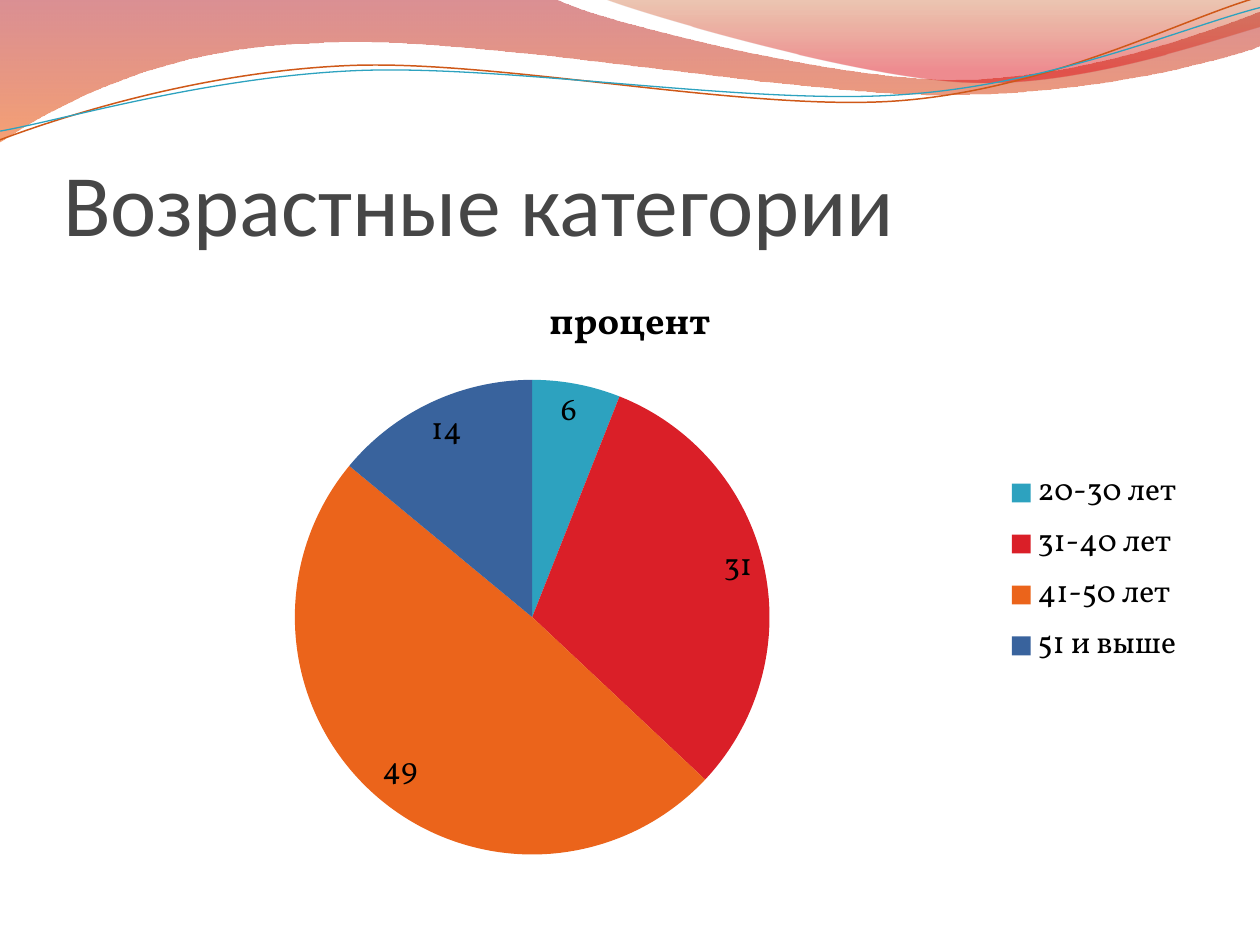
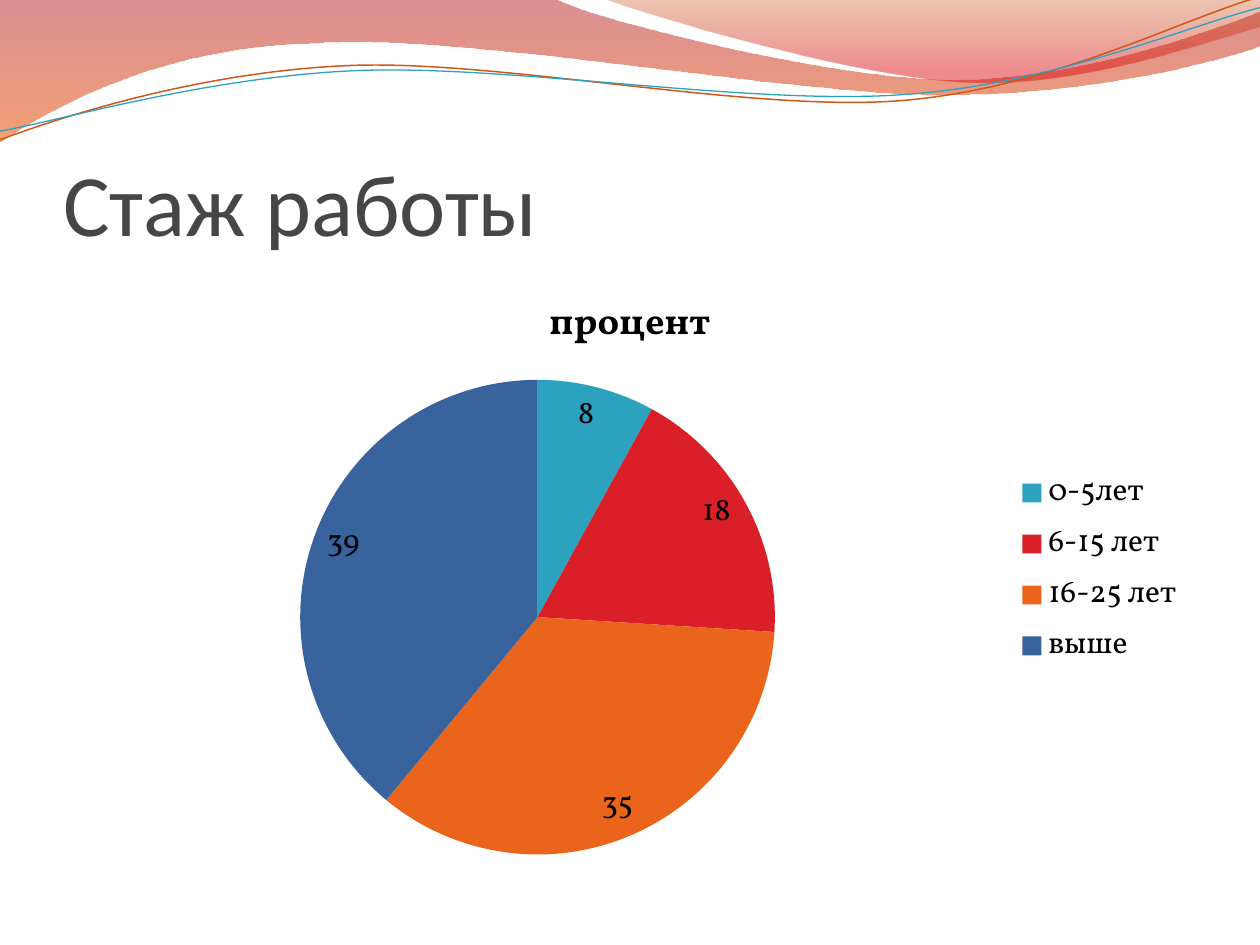
from math import cos, radians, sin

from lxml import etree
from pptx import Presentation
from pptx.chart.data import CategoryChartData
from pptx.dml.color import RGBColor
from pptx.enum.chart import XL_CHART_TYPE as CT, XL_LABEL_POSITION as LP, XL_LEGEND_POSITION as LEG
from pptx.enum.text import MSO_ANCHOR, MSO_AUTO_SIZE, PP_ALIGN
from pptx.oxml.ns import qn
from pptx.util import Pt

PX = 9144  # 100 px to the inch
TILT = 2.7  # degrees the thin curves are turned counter-clockwise

COLORS = {
    "background": "FFFFFF", "title": "464646", "text": "000000",
    "crimson": "AF0911", "amber": "EE5300", "rust": "C24400", "red": "DC000B",
    "orange_line": "CF5818", "teal_line": "2DA2BF",
}
PIE_COLORS = ["2DA2BF", "DA1F28", "EB641B", "39639D"]
TITLE_FONT, CHART_FONT = "Calibri", "Vollkorn"

# Outlines: a pair is a straight step, a triple of pairs is a Bezier curve
WIDE_WAVE = [
    (0, 0), (440, -1),
    ((476, 17), (664, 63), (758, 63)), ((853, 63), (958, 26), (1000, 9)),
    (1001, 36),
    ((983, 44), (870, 76), (746, 75)), ((622, 75), (382, 28), (257, 34)),
    ((129, 36), (46, 83), (-1, 113)),
]
RIGHT_WAVE = [
    (479, -1), ((509, 11), (682, 62), (769, 65)),
    ((856, 69), (961, 32), (1000, 21)), (1000, 0),
]
ORANGE_CURVE = [
    (0, 111), ((48, 93), (158, 57), (277, 52)),
    ((395, 47), (593, 89), (713, 80)), ((833, 71), (938, 15), (998, -2)),
]
TEAL_CURVE = [
    (0, 104), ((47, 96), (164, 61), (283, 56)),
    ((403, 51), (597, 84), (717, 75)), ((836, 67), (941, 21), (1000, 6)),
]
ORANGE_CENTER, TEAL_CENTER = (499, 57), (499, 59)

# Gradient stops: position, colour, opacity in percent
WIDE_STOPS = [(0, "crimson", 45), (1, "amber", 55)]
RIGHT_STOPS = [(0, "rust", 30), (0.8, "red", 45)]

SLIDES = [
    ("Возрастные категории",
     {"20-30 лет": 6, "31-40 лет": 31, "41-50 лет": 49, "51 и выше": 14}),
    ("Стаж работы",
     {"0-5лет": 8, "6-15 лет": 18, "16-25 лет": 35, "выше": 39}),
]


def rgb(name):
    return RGBColor.from_string(COLORS[name])


def is_curve(step):
    return len(step) == 3


def turn(point, center):
    """Turn a point clockwise by TILT, so the shape's rotation turns it back."""
    x, y = point[0] - center[0], point[1] - center[1]
    c, s = cos(radians(TILT)), sin(radians(TILT))
    return center[0] + x * c - y * s, center[1] + x * s + y * c


class Deck:
    def __init__(self, width, height):
        self.prs = Presentation()
        self.prs.slide_width, self.prs.slide_height = width * PX, height * PX
        self.layout = self.prs.slide_layouts[5]
        self.slide = None

    def new_slide(self):
        self.slide = self.prs.slides.add_slide(self.layout)
        fill = self.slide.background.fill
        fill.solid()
        fill.fore_color.rgb = rgb("background")

    def freeform(self, shapes, outline, center=None):
        points = []
        for step in outline:
            points.extend(step if is_curve(step) else [step])
        if center:
            points = [turn(point, center) for point in points]
        start, *rest = [(round(x * PX), round(y * PX)) for x, y in points]
        builder = shapes.build_freeform(*start)
        builder.add_line_segments(rest, close=center is None)
        s = builder.convert_to_shape()
        s.shadow.inherit = False

        # Join every three steps of a curve into one Bezier segment
        lines = list(s.element.iter(qn("a:lnTo")))
        for step in outline[1:]:
            first = lines.pop(0)
            if is_curve(step):
                first.tag = qn("a:cubicBezTo")
                for line in (lines.pop(0), lines.pop(0)):
                    first.append(line[0])
                    line.getparent().remove(line)
        return s

    def wave(self, outline, stops):
        s = self.freeform(self.slide.shapes, outline)
        s.line.fill.background()
        s.fill.gradient()
        s.fill.gradient_angle = 270
        for stop, (position, color, _) in zip(s.fill.gradient_stops, stops):
            stop.position = position
            stop.color.rgb = rgb(color)
        for clr, (_, _, opacity) in zip(s.element.iter(qn("a:srgbClr")), stops):
            etree.SubElement(clr, qn("a:alpha")).set("val", str(opacity * 1000))
        return s

    def curve(self, group, outline, center, color, width):
        s = self.freeform(group.shapes, outline, center)
        s.rotation = 360 - TILT
        s.fill.background()
        s.line.color.rgb = rgb(color)
        s.line.width = Pt(width)

    def header(self):
        """Draw the waves and move them to the layout that all slides share."""
        waves = [self.wave(WIDE_WAVE, WIDE_STOPS), self.wave(RIGHT_WAVE, RIGHT_STOPS)]
        group = self.slide.shapes.add_group_shape()
        self.curve(group, ORANGE_CURVE, ORANGE_CENTER, "orange_line", 0.85)
        self.curve(group, TEAL_CURVE, TEAL_CENTER, "teal_line", 0.75)
        tree = self.layout.shapes.element
        for sp in list(self.layout.placeholders)[1:]:
            tree.remove(sp.element)
        for s in (*waves, group):
            tree.append(s.element)

    def title(self, text, x, y, w, h):
        sp = self.slide.shapes.title
        sp.left, sp.top, sp.width, sp.height = (n * PX for n in (x, y, w, h))
        tf = sp.text_frame
        tf.text = text
        tf.word_wrap = True
        tf.auto_size = MSO_AUTO_SIZE.NONE
        tf.vertical_anchor = MSO_ANCHOR.BOTTOM
        tf.margin_left = tf.margin_right = tf.margin_bottom = 0
        tf.margin_top = 5 * PX
        p = tf.paragraphs[0]
        p.alignment = PP_ALIGN.LEFT
        self.font(p.runs[0].font, TITLE_FONT, 50, "title")

    def font(self, font, name, size, color):
        font.name, font.size = name, Pt(size)
        font.color.rgb = rgb(color)

    def pie(self, name, shares, x, y, w, h):
        data = CategoryChartData()
        data.categories = list(shares)
        data.add_series(name, list(shares.values()))
        chart = self.slide.shapes.add_chart(
            CT.PIE, *(n * PX for n in (x, y, w, h)), data).chart
        self.font(chart.font, CHART_FONT, 18, "text")

        # Title and legend
        chart.has_title = True
        tf = chart.chart_title.text_frame
        tf.text = name
        r = tf.paragraphs[0].runs[0]
        self.font(r.font, CHART_FONT, 21.6, "text")
        r.font.bold = True
        chart.has_legend = True
        chart.legend.position = LEG.RIGHT
        chart.legend.include_in_layout = False

        # Slices and their values
        plot = chart.plots[0]
        plot.vary_by_categories = True
        plot.has_data_labels = True
        labels = plot.data_labels
        labels.show_value = True
        labels.show_percentage = False
        labels.position = LP.BEST_FIT
        self.font(labels.font, CHART_FONT, 18, "text")
        for i, color in enumerate(PIE_COLORS):
            fill = plot.series[0].points[i].format.fill
            fill.solid()
            fill.fore_color.rgb = RGBColor.from_string(color)


def main():
    deck = Deck(1000, 750)
    for number, (heading, shares) in enumerate(SLIDES):
        deck.new_slide()
        if number == 0:
            deck.header()
        deck.title(heading, 50, 77, 900, 125)
        deck.pie("процент", shares, 50, 212, 900, 480)
    deck.prs.save("out.pptx")


if __name__ == "__main__":
    main()
